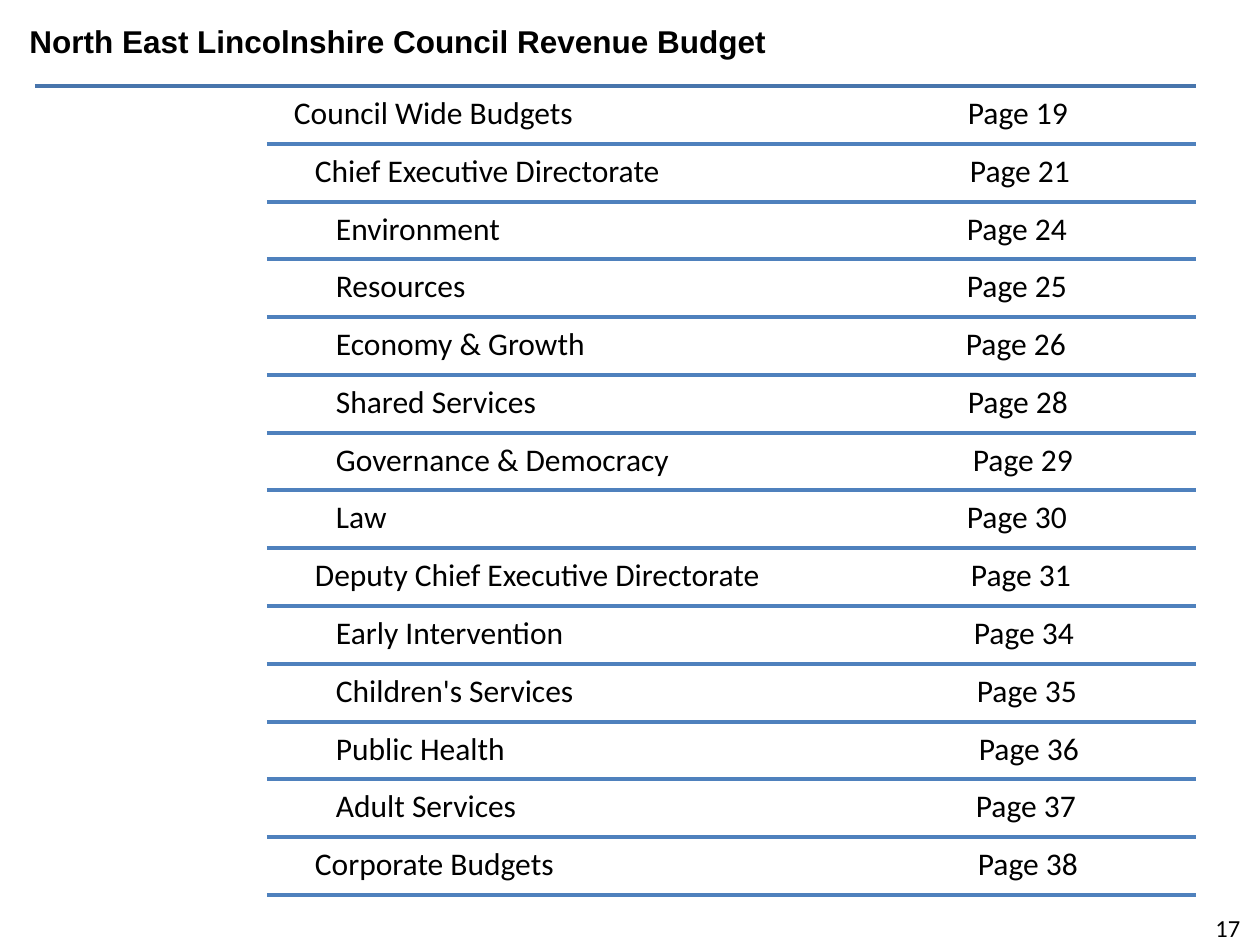
import pptx
import pptx.dml.color
import pptx.enum.shapes
import pptx.enum.text
import pptx.oxml.ns
import pptx.util
from lxml import etree

PX = 914400 // 126
ALIGN = pptx.enum.text.PP_ALIGN
PAGE_W, PAGE_H = 1260, 945

# Contents: indent level, budget, page label, left edge of the page label
ENTRIES = [
    (0, "Council Wide Budgets", "Page 19", 968),
    (1, "Chief Executive Directorate", "Page 21", 970),
    (2, "Environment", "Page 24", 967),
    (2, "Resources", "Page 25", 967),
    (2, "Economy & Growth", "Page 26", 966),
    (2, "Shared Services", "Page 28", 968),
    (2, "Governance & Democracy", "Page 29", 973),
    (2, "Law", "Page 30", 967),
    (1, "Deputy Chief Executive Directorate", "Page 31", 971),
    (2, "Early Intervention", "Page 34", 974),
    (2, "Children's Services", "Page 35", 977),
    (2, "Public Health", "Page 36", 979),
    (2, "Adult Services", "Page 37", 976),
    (1, "Corporate Budgets", "Page 38", 978),
]
LIST_TOP, LIST_BOTTOM = 86, 895
LIST_LEFT, LIST_RIGHT = 285, 1196
INSET, INDENT = 9, 21


def color(value):
    return pptx.dml.color.RGBColor.from_string(value)


class SlideWriter:
    """Holds the style and the current slide."""

    ink = "000000"
    line_width = 2

    def __init__(self, page):
        self.page = page

    def text(self, x, y, w, h, words, size, font="Calibri", bold=False,
             align=ALIGN.LEFT):
        box = self.page.shapes.add_textbox(x * PX, y * PX, w * PX, h * PX)
        box.text_frame.word_wrap = True
        para = box.text_frame.paragraphs[0]
        para.text = words
        para.alignment = align
        para.font.name = font
        para.font.size = pptx.util.Pt(size)
        para.font.bold = bold
        para.font.color.rgb = color(self.ink)
        return box

    def entry(self, y, level, name, label, label_x):
        box = self.text(LIST_LEFT, y, LIST_RIGHT - LIST_LEFT, 55,
                        f"{name}\t{label}", 18)
        frame = box.text_frame
        left = INSET + INDENT * level
        frame.margin_left = left * PX
        frame.margin_top = frame.margin_right = frame.margin_bottom = INSET * PX
        para = frame.paragraphs[0]
        para.line_spacing = 0.9
        # A tab stop places the page label
        qn = pptx.oxml.ns.qn
        props = para._p.get_or_add_pPr()
        tabs = etree.Element(qn("a:tabLst"))
        etree.SubElement(tabs, qn("a:tab"), algn="l",
                         pos=str((label_x - LIST_LEFT - left) * PX))
        props.find(qn("a:defRPr")).addprevious(tabs)

    def rule(self, x, y, hue):
        line = self.page.shapes.add_connector(
            pptx.enum.shapes.MSO_CONNECTOR.STRAIGHT,
            x * PX, y * PX, LIST_RIGHT * PX, y * PX)
        line.line.color.rgb = color(hue)
        line.line.width = pptx.util.Pt(self.line_width)
        etree.SubElement(line._element.spPr, pptx.oxml.ns.qn("a:effectLst"))


def main():
    deck = pptx.Presentation()
    deck.slide_width, deck.slide_height = PAGE_W * PX, PAGE_H * PX
    writer = SlideWriter(deck.slides.add_slide(deck.slide_layouts[6]))

    # Title and top rule
    writer.text(17, 16, 1217, 50, "North East Lincolnshire Council Revenue Budget",
                18, font="Arial", bold=True)
    writer.rule(35, LIST_TOP, "4875AC")

    # Contents list, each entry closed by a rule
    pitch = (LIST_BOTTOM - LIST_TOP) / len(ENTRIES)
    for row, entry in enumerate(ENTRIES):
        writer.entry(round(LIST_TOP + row * pitch) + 2, *entry)
        writer.rule(267, round(LIST_TOP + (row + 1) * pitch), "4F81BD")

    # Page number
    writer.text(1196, 907, 64, 43, "17", 14, align=ALIGN.CENTER)

    deck.save("out.pptx")


if __name__ == "__main__":
    main()
